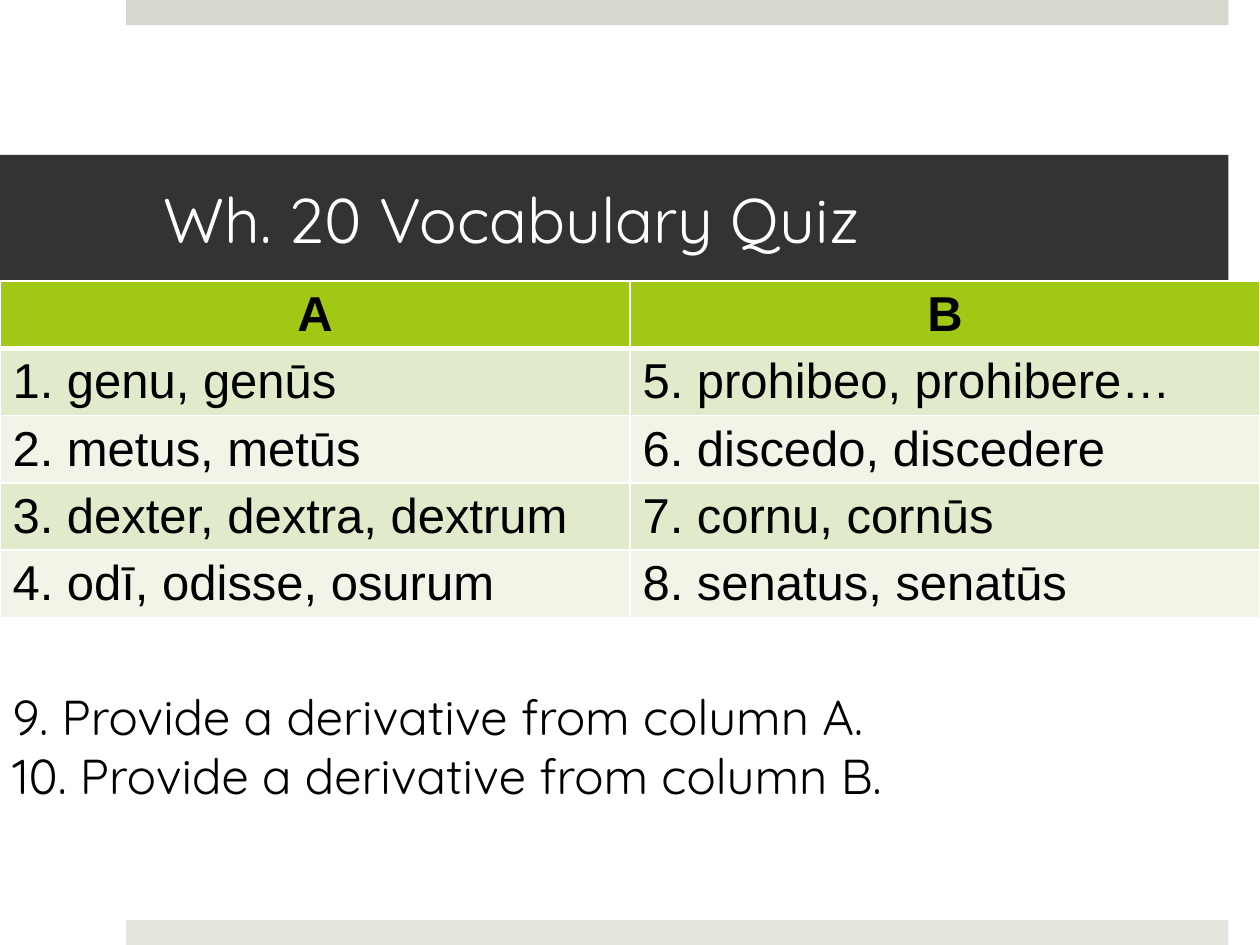
from dataclasses import dataclass

from lxml import etree
from pptx import Presentation
from pptx.dml.color import RGBColor
from pptx.enum import shapes, text
from pptx.oxml import ns
from pptx.util import Inches, Pt


@dataclass(frozen=True)
class Theme:
    top_bar: str = "D6D9CD"
    bottom_bar: str = "E4E6DE"
    banner: str = "333333"
    header: str = "A2C816"
    bands: tuple = ("E0EBCC", "F0F5E8")
    light: str = "FFFFFF"
    dark: str = "000000"
    heading_font: str = "Quicksand"
    table_font: str = "Arial"
    title_size: int = 36
    body_size: int = 28


THEME = Theme()

VOCABULARY = [
    ("A", "B"),
    ("1. genu, genūs", "5. prohibeo, prohibere…"),
    ("2. metus, metūs", "6. discedo, discedere"),
    ("3. dexter, dextra, dextrum", "7. cornu, cornūs"),
    ("4. odī, odisse, osurum", "8. senatus, senatūs"),
]
QUESTIONS = [
    "9. Provide a derivative from column A.",
    "10. Provide a derivative from column B.",
]


def inches(box):
    return [Inches(length) for length in box]


def style(paragraph, font, size, color, bold=False):
    paragraph.font.name = font
    paragraph.font.size = Pt(size)
    paragraph.font.bold = bold
    paragraph.font.color.rgb = RGBColor.from_string(color)


def add_bar(slide, box, color):
    bar = slide.shapes.add_shape(shapes.MSO_SHAPE.RECTANGLE, *inches(box))
    bar.shadow.inherit = False
    bar.fill.solid()
    bar.fill.fore_color.rgb = RGBColor.from_string(color)
    bar.line.fill.background()
    return bar


def add_title(slide, box, title):
    frame = add_bar(slide, box, THEME.banner).text_frame
    frame.word_wrap = True
    frame.vertical_anchor = text.MSO_ANCHOR.MIDDLE
    frame.margin_left, frame.margin_right = Inches(1.3), Inches(0.3)
    paragraph = frame.paragraphs[0]
    paragraph.text = title
    paragraph.alignment = text.PP_ALIGN.LEFT
    style(paragraph, THEME.heading_font, THEME.title_size, THEME.light)


def set_borders(cell, bottom_width):
    """Draw the four cell borders, which must come before the fill."""
    properties = cell._tc.get_or_add_tcPr()
    widths = {"a:lnL": 1, "a:lnR": 1, "a:lnT": 1, "a:lnB": bottom_width}
    for position, (tag, width) in enumerate(widths.items()):
        line = etree.Element(ns.qn(tag), w=str(Pt(width)))
        fill = etree.SubElement(line, ns.qn("a:solidFill"))
        etree.SubElement(fill, ns.qn("a:srgbClr"), val=THEME.light)
        properties.insert(position, line)


def add_vocabulary(slide, box, rows):
    table = slide.shapes.add_table(len(rows), len(rows[0]), *inches(box)).table
    for row, words in enumerate(rows):
        is_header = row == 0
        color = THEME.header if is_header else THEME.bands[(row - 1) % 2]
        for column, word in enumerate(words):
            cell = table.cell(row, column)
            cell.fill.solid()
            cell.fill.fore_color.rgb = RGBColor.from_string(color)
            set_borders(cell, 3 if is_header else 1)
            paragraph = cell.text_frame.paragraphs[0]
            paragraph.text = word
            if is_header:
                paragraph.alignment = text.PP_ALIGN.CENTER
            style(paragraph, THEME.table_font, THEME.body_size, THEME.dark, is_header)


def add_questions(slide, box, questions):
    frame = slide.shapes.add_textbox(*inches(box)).text_frame
    frame.word_wrap = True
    frame.auto_size = text.MSO_AUTO_SIZE.SHAPE_TO_FIT_TEXT
    for index, question in enumerate(questions):
        paragraph = frame.add_paragraph() if index else frame.paragraphs[0]
        paragraph.text = question
        style(paragraph, THEME.heading_font, THEME.body_size, THEME.dark)


def main():
    presentation = Presentation()
    presentation.slide_width, presentation.slide_height = Inches(10), Inches(7.5)
    slide = presentation.slides.add_slide(presentation.slide_layouts[6])

    # Edge bars
    add_bar(slide, (1, 0, 8.75, 0.2), THEME.top_bar)
    add_bar(slide, (1, 7.3, 8.75, 0.2), THEME.bottom_bar)

    # Title, word table and closing questions
    add_title(slide, (0, 1.23, 9.75, 1), "Wh. 20 Vocabulary Quiz")
    add_vocabulary(slide, (0, 2.23, 10, 2.65), VOCABULARY)
    add_questions(slide, (0, 5.4, 9.75, 1.04), QUESTIONS)

    presentation.save("out.pptx")


if __name__ == "__main__":
    main()
